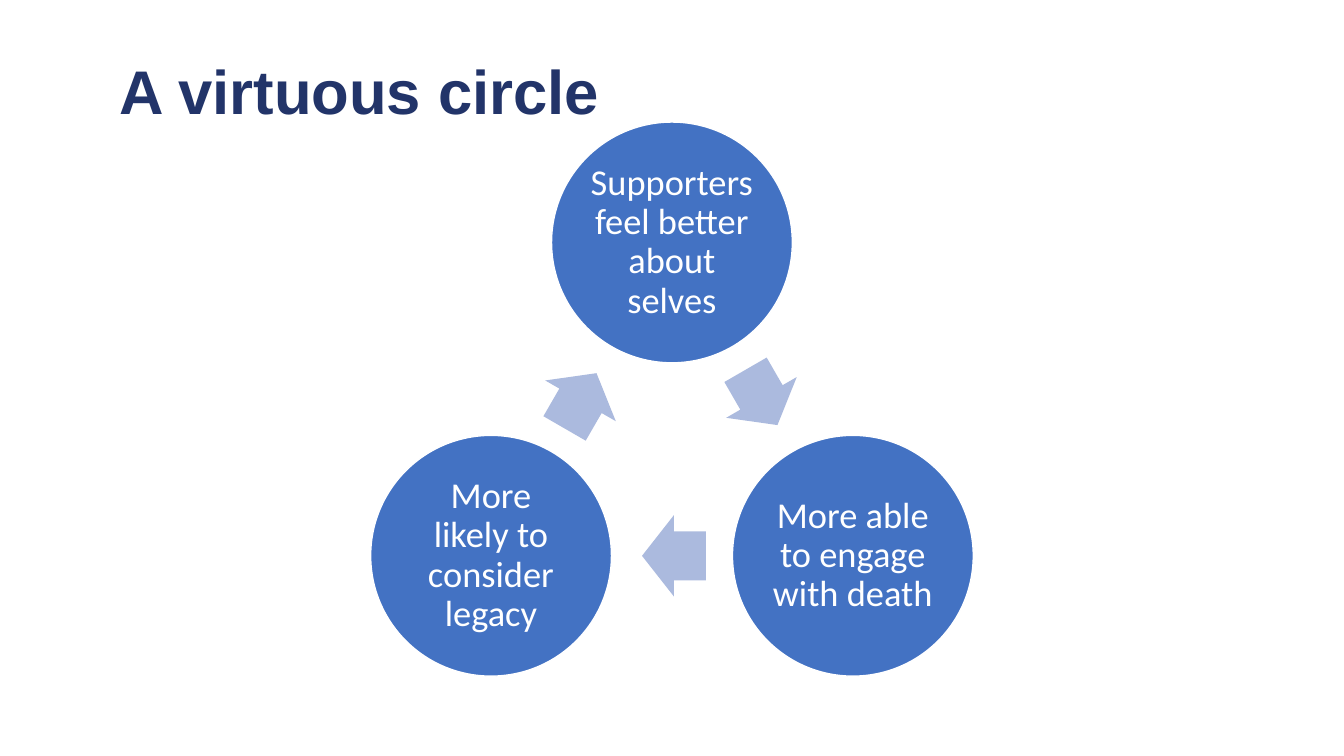
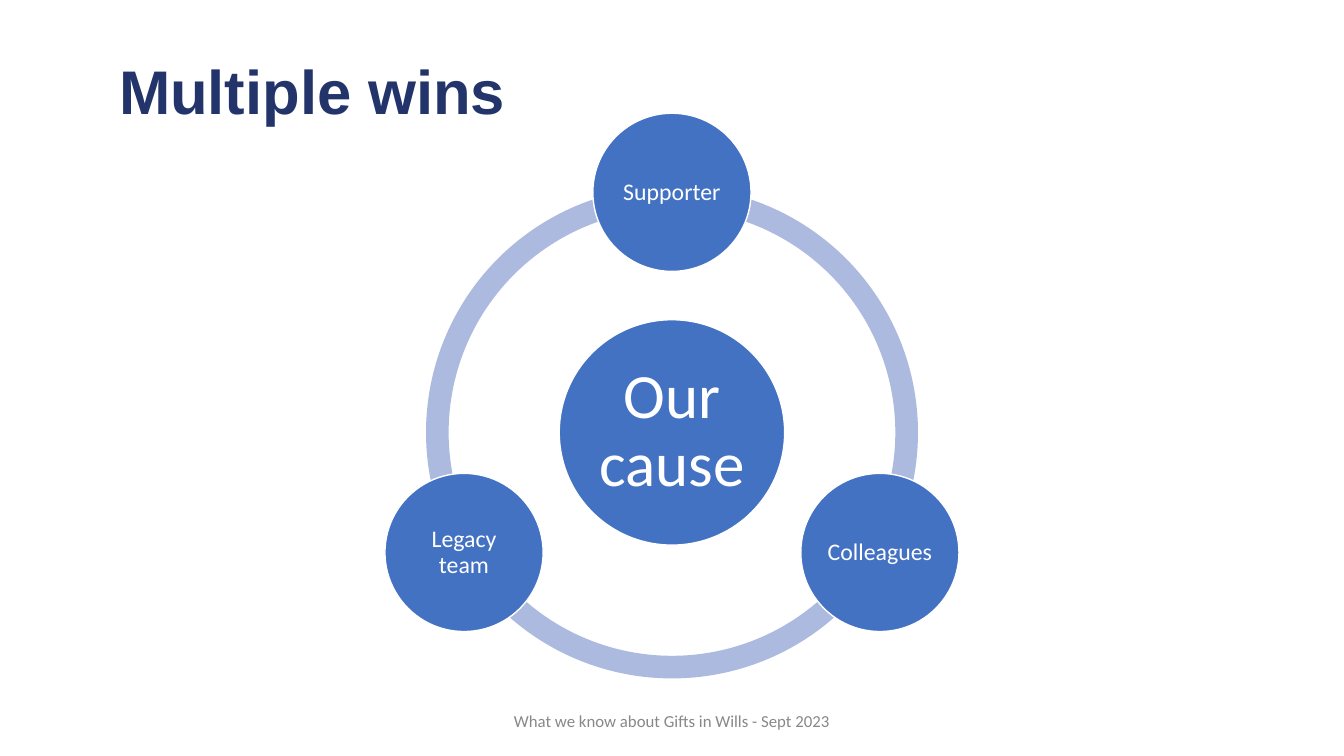
from math import cos, radians, sin

from pptx import Presentation
from pptx.dml.color import RGBColor
from pptx.enum.shapes import MSO_SHAPE
from pptx.enum.text import MSO_ANCHOR, MSO_AUTO_SIZE, PP_ALIGN
from pptx.util import Pt

NAVY = RGBColor(0x22, 0x34, 0x69)
BLUE = RGBColor(0x43, 0x72, 0xC3)
PALE_BLUE = RGBColor(0xAB, 0xBA, 0xDE)
GRAY = RGBColor(0x88, 0x88, 0x88)
WHITE = RGBColor(0xFF, 0xFF, 0xFF)

CYCLE_TITLE = "A virtuous circle"
CYCLE_STEPS = [
    "Supporters feel better about selves",
    "More able to engage with death",
    "More likely to consider legacy",
]
WINS_TITLE = "Multiple wins"
WINS_HUB = "Our cause"
WINNERS = ["Supporter", "Colleagues", "Legacy team"]
FOOTER = "What we know about Gifts in Wills - Sept 2023"

CENTER_X = 480
CYCLE_Y, CYCLE_RADIUS, STEP_SIZE = 322.4, 149.2, 172
ARROW_WIDTH, ARROW_HEIGHT, ARROW_SETBACK = 45.6, 58.2, 1.4
WINS_Y, WINS_RADIUS, WINNER_SIZE = 308.9, 171.5, 113
HUB_SIZE, RING_SIZE, RING_THICKNESS = 161, 351.4, 0.046
ANGLE_UNIT = 0.6


def polar(center_y, radius, angle):
    turn = radians(angle)
    return CENTER_X + radius * cos(turn), center_y + radius * sin(turn)


def angles(items):
    step = 360 / len(items)
    return [-90 + i * step for i in range(len(items))], step


def add_centered(slide, kind, x, y, width, height, fill):
    shape = slide.shapes.add_shape(
        kind, Pt(x - width / 2), Pt(y - height / 2), Pt(width), Pt(height))
    shape.shadow.inherit = False
    shape.fill.solid()
    shape.fill.fore_color.rgb = fill
    shape.line.fill.background()
    return shape


def write(frame, text, font, size, color, align, spacing=0.9, bold=False):
    frame.word_wrap = True
    frame.auto_size = MSO_AUTO_SIZE.NONE
    frame.vertical_anchor = MSO_ANCHOR.MIDDLE
    frame.text = text
    paragraph = frame.paragraphs[0]
    paragraph.alignment = align
    paragraph.line_spacing = spacing
    paragraph.font.name = font
    paragraph.font.size = Pt(size)
    paragraph.font.bold = bold
    paragraph.font.color.rgb = color


def add_circle(slide, text, x, y, diameter, size, inset):
    circle = add_centered(slide, MSO_SHAPE.OVAL, x, y, diameter, diameter, BLUE)
    circle.line.color.rgb = WHITE
    circle.line.width = Pt(1)
    frame = circle.text_frame
    frame.margin_left = frame.margin_right = Pt(inset)
    frame.margin_top = frame.margin_bottom = Pt(inset)
    write(frame, text, "Calibri", size, WHITE, PP_ALIGN.CENTER)


def add_titled_slide(deck, text):
    slide = deck.slides.add_slide(deck.slide_layouts[5])
    title = slide.shapes.title
    title.left, title.top, title.width, title.height = Pt(77.8), Pt(15.1), Pt(828), Pt(104.4)
    write(title.text_frame, text, "Arial", 44, NAVY, PP_ALIGN.LEFT, bold=True)
    return slide


def build_cycle(deck):
    slide = add_titled_slide(deck, CYCLE_TITLE)
    starts, step = angles(CYCLE_STEPS)
    for text, start in zip(CYCLE_STEPS, starts):
        x, y = polar(CYCLE_Y, CYCLE_RADIUS, start)
        add_circle(slide, text, x, y, STEP_SIZE, 26, 2.6)
        middle = start + step / 2
        heading = middle + 90
        x, y = polar(CYCLE_Y, CYCLE_RADIUS * cos(radians(step / 2)), middle)
        arrow = add_centered(
            slide, MSO_SHAPE.RIGHT_ARROW,
            x - ARROW_SETBACK * cos(radians(heading)),
            y - ARROW_SETBACK * sin(radians(heading)),
            ARROW_WIDTH, ARROW_HEIGHT, PALE_BLUE)
        arrow.adjustments[0] = 0.6
        arrow.adjustments[1] = 0.5
        arrow.rotation = heading % 360


def build_wins(deck):
    slide = add_titled_slide(deck, WINS_TITLE)
    starts, step = angles(WINNERS)
    for start in starts:
        arc = add_centered(
            slide, MSO_SHAPE.BLOCK_ARC, CENTER_X, WINS_Y, RING_SIZE, RING_SIZE, PALE_BLUE)
        arc.adjustments[0] = start % 360 * ANGLE_UNIT
        arc.adjustments[1] = (start + step) % 360 * ANGLE_UNIT
        arc.adjustments[2] = RING_THICKNESS
    add_circle(slide, WINS_HUB, CENTER_X, WINS_Y, HUB_SIZE, 45, 4.3)
    for text, start in zip(WINNERS, starts):
        x, y = polar(WINS_Y, WINS_RADIUS, start)
        add_circle(slide, text, x, y, WINNER_SIZE, 17, 1.4)
    footer = slide.shapes.add_textbox(Pt(318), Pt(500.4), Pt(324), Pt(28.8))
    write(footer.text_frame, FOOTER, "Calibri", 12, GRAY, PP_ALIGN.CENTER, spacing=1.0)


def main():
    deck = Presentation()
    deck.slide_width, deck.slide_height = Pt(960), Pt(540)
    build_cycle(deck)
    build_wins(deck)
    deck.save("out.pptx")


if __name__ == "__main__":
    main()
